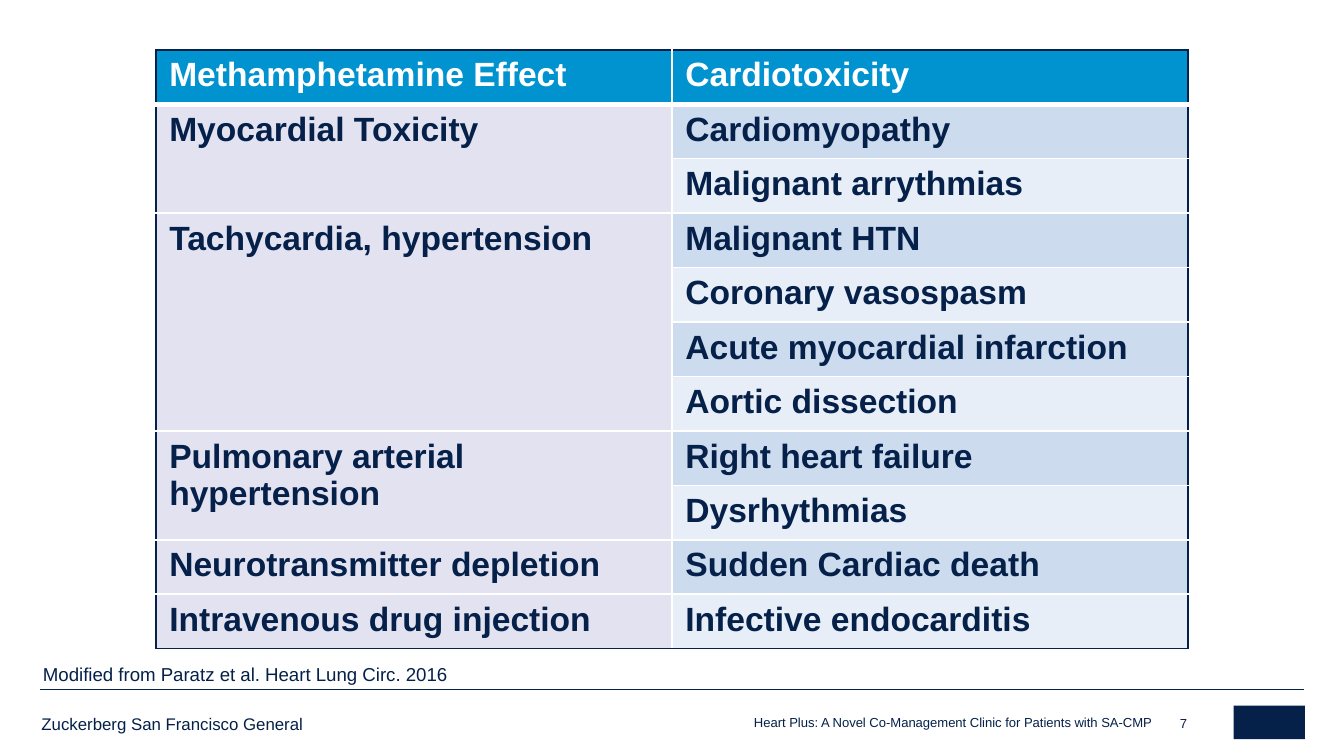
from lxml import etree
from pptx import Presentation
from pptx.dml.color import RGBColor
from pptx.enum import shapes, text
from pptx.oxml import ns
from pptx.util import Inches, Pt

NAVY, WHITE, BLUE = "052049", "FFFFFF", "0093D0"
LILAC, BANDS = "E3E2F0", ("CCDCEE", "E7EEF7")

HEAD = ("Methamphetamine Effect", "Cardiotoxicity")
GROUPS = [
    ("Myocardial Toxicity", ["Cardiomyopathy", "Malignant arrythmias"]),
    ("Tachycardia, hypertension",
     ["Malignant HTN", "Coronary vasospasm",
      "Acute myocardial infarction", "Aortic dissection"]),
    ("Pulmonary arterial hypertension",
     ["Right heart failure", "Dysrhythmias"]),
    ("Neurotransmitter depletion", ["Sudden Cardiac death"]),
    ("Intravenous drug injection", ["Infective endocarditis"]),
]
LEFT, RIGHT = text.PP_ALIGN.LEFT, text.PP_ALIGN.RIGHT
TOP, BASE = text.MSO_ANCHOR.TOP, text.MSO_ANCHOR.BOTTOM
# words, (left, top, width, height), size, alignment, anchor, (side, top inset)
NOTES = [
    ("Zuckerberg San Francisco General", (0.21, 5.26, 2.52, 0.25),
     9, LEFT, TOP, (0.1, 0.05)),
    ("Heart Plus: A Novel Co-Management Clinic for Patients with SA-CMP",
     (3.86, 5.32, 4.71, 0.11), 7, RIGHT, BASE, (0, 0)),
    ("7", (8.78, 5.31, 0.27, 0.13), 7, LEFT, BASE, (0, 0)),
    ("Modified from Paratz et al. Heart Lung Circ. 2016",
     (0.32, 4.93, 6.97, 0.17), 10, LEFT, TOP, (0, 0)),
]
RULES = [(0.4, 9.6), (0.3, 9.7)]
RULE_Y = 5.13


def rgb(code):
    return RGBColor.from_string(code)


def write(frame, words, size, color, bold=False):
    para = frame.paragraphs[0]
    run = para.add_run()
    run.text = words
    font = run.font
    font.name, font.size, font.bold = "Arial", Pt(size), bold
    font.color.rgb = rgb(color)
    return para


def edge(cell, side, color, width):
    props = cell._tc.get_or_add_tcPr()
    line = etree.SubElement(props, ns.qn("a:ln" + side), w=str(Pt(width)))
    fill = etree.SubElement(line, ns.qn("a:solidFill"))
    etree.SubElement(fill, ns.qn("a:srgbClr"), val=color)


def style(cell, row, col, last, fill):
    """Draw navy outer edges and white inner ones, then fill the cell."""
    edge(cell, "L", WHITE if col else NAVY, 1)
    edge(cell, "R", NAVY if col else WHITE, 1)
    edge(cell, "T", WHITE if row else NAVY, 3 if row == 1 else 1)
    edge(cell, "B", NAVY if row == last else WHITE, 1 if row else 3)
    cell.fill.solid()
    cell.fill.fore_color.rgb = rgb(fill)


def add_grid(slide):
    count = 1 + sum(len(items) for _, items in GROUPS)
    grid = slide.shapes.add_table(count, 2, Inches(1.16), Inches(0.37),
                                  Inches(7.68), Inches(4.46)).table
    for row in range(count):
        for col in range(2):
            fill = BLUE if row == 0 else (LILAC, BANDS[(row - 1) % 2])[col]
            style(grid.cell(row, col), row, col, count - 1, fill)

    def put(row, col, words):
        color = NAVY if row else WHITE
        write(grid.cell(row, col).text_frame, words, 18, color, True)

    for col, words in enumerate(HEAD):
        put(0, col, words)
    row = 1
    for effect, items in GROUPS:
        put(row, 0, effect)
        for step, item in enumerate(items):
            put(row + step, 1, item)
        end = row + len(items) - 1
        if end > row:
            grid.cell(row, 0).merge(grid.cell(end, 0))
        row = end + 1


def add_foot(slide):
    for start, end in RULES:
        rule = slide.shapes.add_connector(
            shapes.MSO_CONNECTOR.STRAIGHT, Inches(start), Inches(RULE_Y),
            Inches(end), Inches(RULE_Y))
        rule.line.color.rgb = rgb(NAVY)
        rule.line.width = Pt(0.25)
        etree.SubElement(rule._element.spPr, ns.qn("a:effectLst"))
    badge = slide.shapes.add_shape(
        shapes.MSO_SHAPE.RECTANGLE,
        Inches(9.18), Inches(5.25), Inches(0.53), Inches(0.25))
    badge.shadow.inherit = False
    badge.fill.solid()
    badge.fill.fore_color.rgb = rgb(NAVY)
    badge.line.fill.background()
    for words, place, size, align, anchor, (side, top) in NOTES:
        frame = slide.shapes.add_textbox(*map(Inches, place)).text_frame
        frame.word_wrap = True
        frame.vertical_anchor = anchor
        frame.margin_left = frame.margin_right = Inches(side)
        frame.margin_top = frame.margin_bottom = Inches(top)
        write(frame, words, size, NAVY).alignment = align


def main():
    deck = Presentation()
    deck.slide_width = Inches(10)
    deck.slide_height = deck.slide_width * 9 // 16
    slide = deck.slides.add_slide(deck.slide_layouts[6])
    add_foot(slide)
    add_grid(slide)
    deck.save("out.pptx")


if __name__ == "__main__":
    main()
